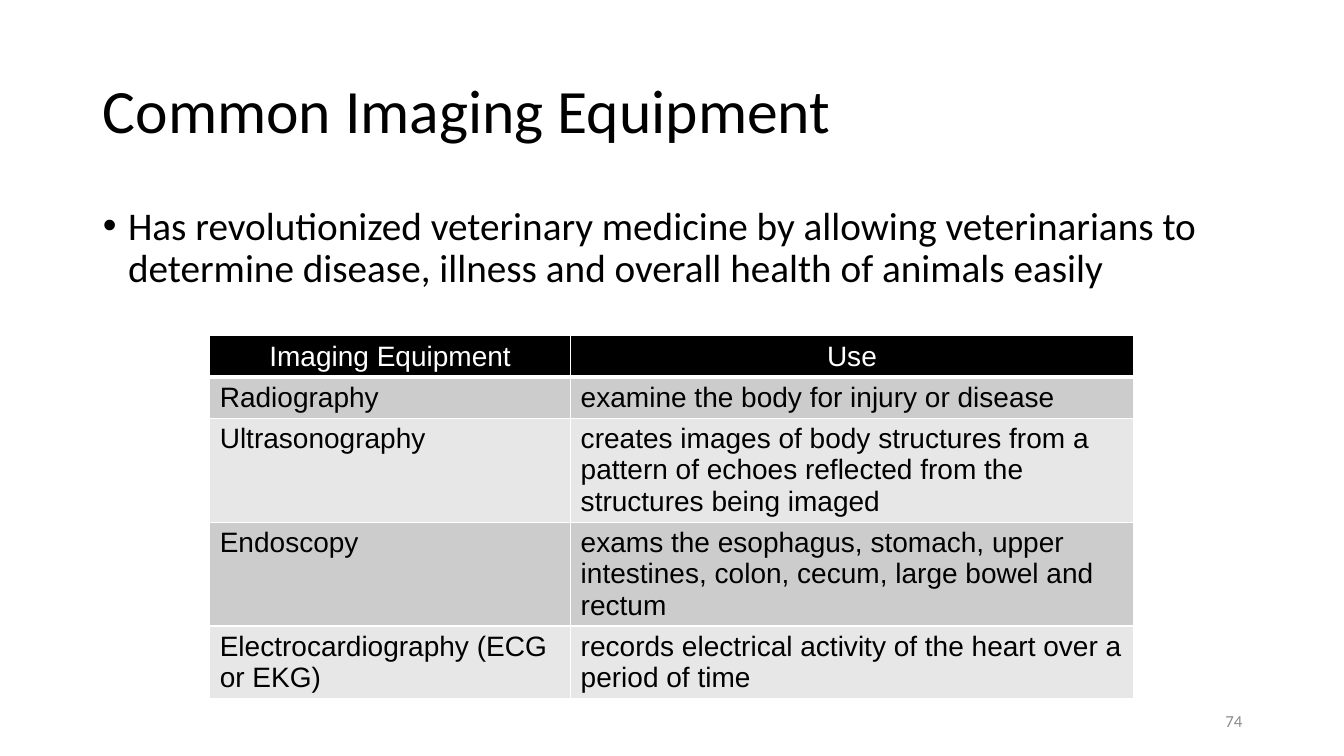
from dataclasses import dataclass

from lxml import etree
from pptx import Presentation
from pptx import util as u
from pptx.dml.color import RGBColor
from pptx.enum import text
from pptx.oxml import ns

BLACK = RGBColor(0x00, 0x00, 0x00)
WHITE = RGBColor(0xFF, 0xFF, 0xFF)
GRAY = RGBColor(0x8C, 0x8C, 0x8C)
BANDS = (RGBColor(0xCC, 0xCC, 0xCC), RGBColor(0xE7, 0xE7, 0xE7))
LEFT, CENTER, RIGHT = text.PP_ALIGN.LEFT, text.PP_ALIGN.CENTER, text.PP_ALIGN.RIGHT
TOP, MIDDLE = text.MSO_ANCHOR.TOP, text.MSO_ANCHOR.MIDDLE


@dataclass(frozen=True)
class Style:
    size: float
    font: str
    color: RGBColor
    align: int = LEFT
    spacing: float = 1.0
    before: float = 0


@dataclass(frozen=True)
class Equipment:
    name: str
    use: str
    height: float


TITLE = Style(44, "Calibri", BLACK, spacing=0.9)
BODY = Style(28, "Calibri", BLACK, spacing=0.9, before=10)
PAGE_NUMBER = Style(12, "Calibri", GRAY, RIGHT)
HEADER = Style(20, "Arial", WHITE, CENTER)
ENTRY = Style(20, "Arial", BLACK)

EQUIPMENT = [
    Equipment("Imaging Equipment", "Use", 0.41),
    Equipment("Radiography", "examine the body for injury or disease", 0.41),
    Equipment("Ultrasonography", "creates images of body structures from a pattern "
              "of echoes reflected from the structures being imaged", 1.03),
    Equipment("Endoscopy", "exams the esophagus, stomach, upper intestines, colon, "
              "cecum, large bowel and rectum", 1.03),
    Equipment("Electrocardiography (ECG or EKG)",
              "records electrical activity of the heart over a period of time", 0.71),
]
COLUMN_WIDTHS = (3.58, 5.58)


def set_all(target, values: dict) -> None:
    for key, value in values.items():
        setattr(target, key, value)


def write(frame, words: str, style: Style) -> None:
    frame.text = words
    paragraph = frame.paragraphs[0]
    set_all(paragraph, {"alignment": style.align, "line_spacing": style.spacing,
                        "space_before": u.Pt(style.before)})
    font = paragraph.runs[0].font
    set_all(font, {"size": u.Pt(style.size), "name": style.font, "bold": False})
    font.color.rgb = style.color


def place(shape, left: float, top: float, width: float, height: float,
          anchor: int) -> None:
    set_all(shape, {"left": u.Inches(left), "top": u.Inches(top),
                    "width": u.Inches(width), "height": u.Inches(height)})
    set_all(shape.text_frame, {"word_wrap": True, "vertical_anchor": anchor,
                               "auto_size": text.MSO_AUTO_SIZE.NONE})


def add_borders(cell, bottom: float) -> None:
    properties = cell._tc.get_or_add_tcPr()
    widths = {"a:lnL": 1, "a:lnR": 1, "a:lnT": 1, "a:lnB": bottom}
    # Borders come before the fill in the cell properties
    for position, (side, width) in enumerate(widths.items()):
        line = etree.Element(ns.qn(side), w=str(u.Pt(width)))
        fill = etree.SubElement(line, ns.qn("a:solidFill"))
        etree.SubElement(fill, ns.qn("a:srgbClr"), val=str(WHITE))
        properties.insert(position, line)


def add_equipment_table(slide, left: float, top: float) -> None:
    table = slide.shapes.add_table(
        len(EQUIPMENT), len(COLUMN_WIDTHS), u.Inches(left), u.Inches(top),
        u.Inches(sum(COLUMN_WIDTHS)),
        u.Inches(sum(item.height for item in EQUIPMENT))).table
    for column, width in zip(table.columns, COLUMN_WIDTHS):
        column.width = u.Inches(width)
    for index, (row, item) in enumerate(zip(table.rows, EQUIPMENT)):
        row.height = u.Inches(item.height)
        is_header = index == 0
        for cell, words in zip(row.cells, (item.name, item.use)):
            write(cell.text_frame, words, HEADER if is_header else ENTRY)
            cell.fill.solid()
            cell.fill.fore_color.rgb = BLACK if is_header else BANDS[(index - 1) % 2]
            add_borders(cell, 3 if is_header else 1)


def main() -> None:
    presentation = Presentation()
    set_all(presentation, {"slide_width": u.Inches(13.33),
                           "slide_height": u.Inches(7.5)})
    slide = presentation.slides.add_slide(presentation.slide_layouts[1])

    # Title
    title = slide.shapes.title
    place(title, 0.92, 0.4, 11.5, 1.45, MIDDLE)
    write(title.text_frame, "Common Imaging Equipment", TITLE)

    # Bulleted statement
    benefit = slide.placeholders[1]
    place(benefit, 0.92, 2, 11.5, 4.76, TOP)
    write(benefit.text_frame, "Has revolutionized veterinary medicine by allowing "
          "veterinarians to determine disease, illness and overall health of "
          "animals easily", BODY)
    bullet = benefit.text_frame.paragraphs[0]._p.get_or_add_pPr()
    bullet.set("marL", str(u.Inches(0.25)))
    bullet.set("indent", str(u.Inches(-0.25)))
    etree.SubElement(bullet, ns.qn("a:buFont"), typeface="Arial")
    etree.SubElement(bullet, ns.qn("a:buChar"), char="•")

    # Page number
    page_number = slide.shapes.add_textbox(0, 0, 0, 0)
    place(page_number, 9.42, 6.95, 3, 0.4, MIDDLE)
    write(page_number.text_frame, "74", PAGE_NUMBER)

    # Equipment and its uses
    add_equipment_table(slide, 2.08, 3.33)

    presentation.save("out.pptx")


if __name__ == "__main__":
    main()
